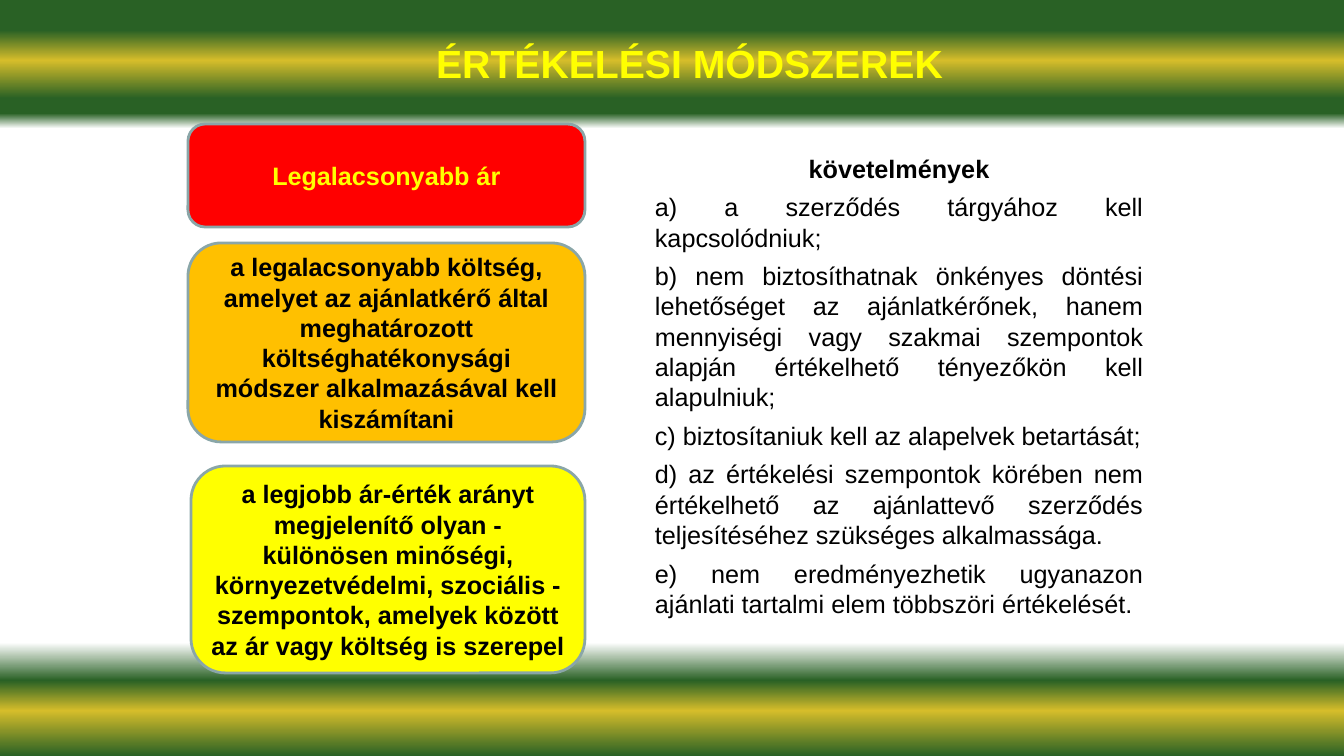
from lxml import etree
from pptx import Presentation
from pptx import util as u
from pptx.dml.color import RGBColor
from pptx.enum import shapes, text
from pptx.oxml import ns

GREEN = RGBColor(0x29, 0x61, 0x25)
GOLD = RGBColor(0xD6, 0xBD, 0x2A)
WHITE = RGBColor(0xFF, 0xFF, 0xFF)
YELLOW = RGBColor(0xFF, 0xFF, 0x00)
ORANGE = RGBColor(0xFF, 0xC0, 0x00)
RED = RGBColor(0xFF, 0x00, 0x00)
BLACK = RGBColor(0x00, 0x00, 0x00)
OUTLINE = RGBColor(0x8A, 0xA6, 0xA8)

BANDS = [(4, GREEN), (8, GOLD), (13, GREEN), (15, GREEN), (17, WHITE),
         (85, WHITE), (90, GREEN), (94, GOLD), (100, GREEN)]

METHODS = [
    ((188, 124, 397, 103), RED, YELLOW, "Legalacsonyabb ár"),
    ((188, 243, 397, 199), ORANGE, BLACK,
     "a legalacsonyabb költség, amelyet az ajánlatkérő által meghatározott "
     "költséghatékonysági módszer alkalmazásával kell kiszámítani"),
    ((191, 466, 394, 207), YELLOW, BLACK,
     "a legjobb ár-érték arányt megjelenítő olyan - különösen minőségi, "
     "környezetvédelmi, szociális - szempontok, amelyek között az ár vagy "
     "költség is szerepel"),
]

REQUIREMENTS = [
    "a) a szerződés tárgyához kell kapcsolódniuk;",
    "b) nem biztosíthatnak önkényes döntési lehetőséget az ajánlatkérőnek, "
    "hanem mennyiségi vagy szakmai szempontok alapján értékelhető tényezőkön "
    "kell alapulniuk;",
    "c) biztosítaniuk kell az alapelvek betartását;",
    "d) az értékelési szempontok körében nem értékelhető az ajánlattevő "
    "szerződés teljesítéséhez szükséges alkalmassága.",
    "e) nem eredményezhetik ugyanazon ajánlati tartalmi elem többszöri értékelését.",
]


def write(paragraph, content, size=18, color=BLACK, bold=True,
          align=text.PP_ALIGN.CENTER, before=0):
    paragraph.alignment = align
    paragraph.space_before = u.Pt(before)
    run = paragraph.add_run()
    run.text = content
    run.font.name = "Arial"
    run.font.size = u.Pt(size)
    run.font.bold = bold
    run.font.color.rgb = color


class MethodsSlide:
    SCALE = 914400 / 100.8

    def __init__(self, deck):
        deck.slide_width, deck.slide_height = self.emu(1344, 756)
        self.slide = deck.slides.add_slide(deck.slide_layouts[6])

    def emu(self, *lengths):
        return [u.Emu(round(length * self.SCALE)) for length in lengths]

    def background(self, bands):
        fill = self.slide.background.fill
        fill.gradient()
        fill.gradient_angle = 270
        stops = next(self.slide.element.iter(ns.qn("a:gsLst")))
        for stop in list(stops):
            stops.remove(stop)
        for percent, color in bands:
            stop = etree.SubElement(stops, ns.qn("a:gs"), pos=str(percent * 1000))
            etree.SubElement(stop, ns.qn("a:srgbClr"), val=str(color))

    def text_area(self, box, anchor=text.MSO_ANCHOR.TOP):
        frame = self.slide.shapes.add_textbox(*self.emu(*box)).text_frame
        frame.word_wrap = True
        frame.vertical_anchor = anchor
        return frame

    def card(self, box, fill, color, content):
        card = self.slide.shapes.add_shape(
            shapes.MSO_SHAPE.ROUNDED_RECTANGLE, *self.emu(*box))
        card.shadow.inherit = False
        card.fill.solid()
        card.fill.fore_color.rgb = fill
        card.line.color.rgb = OUTLINE
        card.line.width = u.Pt(2)
        card.text_frame.word_wrap = True
        card.text_frame.vertical_anchor = text.MSO_ANCHOR.MIDDLE
        write(card.text_frame.paragraphs[0], content, color=color)


def main():
    deck = Presentation()
    page = MethodsSlide(deck)
    page.background(BANDS)

    title = page.text_area((236, 0, 907, 126), text.MSO_ANCHOR.MIDDLE)
    write(title.paragraphs[0], "ÉRTÉKELÉSI MÓDSZEREK", size=28, color=YELLOW)

    for box, fill, color, content in METHODS:
        page.card(box, fill, color, content)

    requirements = page.text_area((645, 148, 508, 480))
    write(requirements.paragraphs[0], "követelmények")
    for requirement in REQUIREMENTS:
        write(requirements.add_paragraph(), requirement, bold=False,
              align=text.PP_ALIGN.JUSTIFY, before=6)

    deck.save("out.pptx")


if __name__ == "__main__":
    main()
